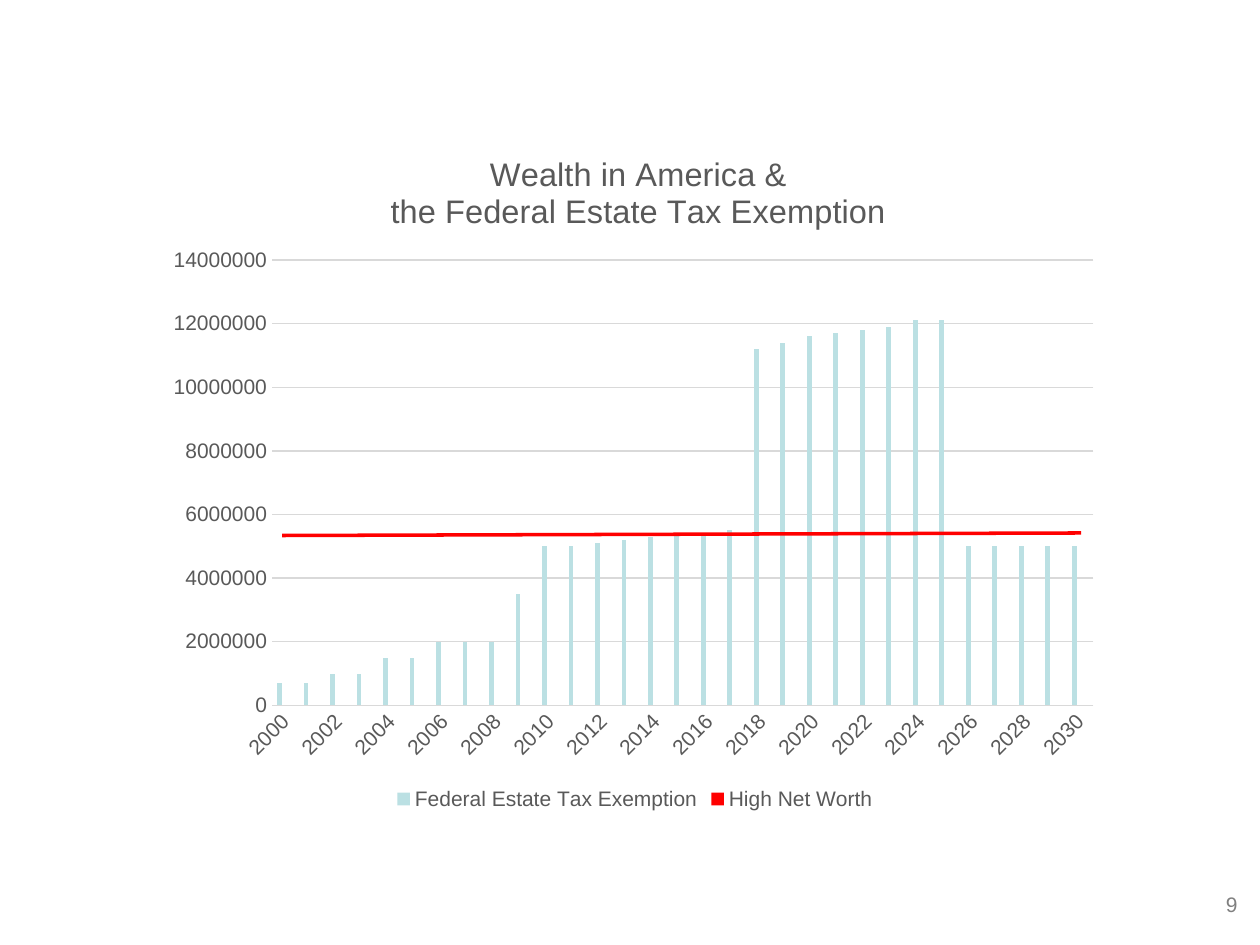
from itertools import chain, repeat
from typing import NamedTuple

from pptx import Presentation
from pptx.chart.data import CategoryChartData
from pptx.dml.color import RGBColor
from pptx.enum.chart import XL_CHART_TYPE, XL_LEGEND_POSITION, XL_TICK_MARK
from pptx.enum.shapes import MSO_CONNECTOR
from pptx.enum.text import MSO_ANCHOR, PP_ALIGN
from pptx.oxml import parse_xml
from pptx.oxml.ns import nsdecls, qn
from pptx.oxml.xmlchemy import OxmlElement
from pptx.util import Inches, Pt

FONT = "Arial"
TEXT_GRAY = "595959"
GRID_GRAY = "D9D9D9"
RED = "FF0000"


class Series(NamedTuple):
    name: str
    color: str
    values: list


class Run(NamedTuple):
    """An amount that stays the same for a number of years."""
    amount: int
    years: int = 1


EXEMPTIONS = [
    Run(700000, 2), Run(1000000, 2), Run(1500000, 2), Run(2000000, 3),
    Run(3500000), Run(5000000, 2), Run(5100000), Run(5200000), Run(5300000),
    Run(5400000, 2), Run(5500000), Run(11200000), Run(11400000),
    Run(11600000), Run(11700000), Run(11800000), Run(11900000),
    Run(12100000, 2), Run(5000000, 5),
]
YEARS = range(2000, 2031)
SERIES = [
    Series("Federal Estate Tax Exemption", "BBE0E3",
           list(chain.from_iterable(repeat(*run) for run in EXEMPTIONS))),
    Series("Series 2", "333399", [None] * len(YEARS)),
    Series("High Net Worth", RED, [None] * len(YEARS)),
]


def color(hex_string: str) -> RGBColor:
    return RGBColor.from_string(hex_string)


def style_font(font, size: float, hex_string: str) -> None:
    font.name = FONT
    font.size = Pt(size)
    font.bold = False
    font.color.rgb = color(hex_string)


def style_line(line, hex_string: str, width: float) -> None:
    line.color.rgb = color(hex_string)
    line.width = Pt(width)


def place(parent, index: int, inner: bool = False, **shares: float) -> None:
    """Fix a chart part at shares (x, y, w, h) of the chart's size."""
    for layout in parent.findall(qn("c:layout")):
        parent.remove(layout)
    target = '<c:layoutTarget val="inner"/>' if inner else ""
    modes = "".join(f'<c:{key}Mode val="edge"/>' for key in "xy")
    sizes = "".join(f'<c:{key} val="{share}"/>' for key, share in shares.items())
    parent.insert(index, parse_xml(
        f'<c:layout {nsdecls("c")}><c:manualLayout>{target}{modes}{sizes}'
        "</c:manualLayout></c:layout>"))


def hide_legend_entry(chart, index: int) -> None:
    position = chart.element.find(".//" + qn("c:legendPos"))
    position.addnext(parse_xml(
        f'<c:legendEntry {nsdecls("c")}><c:idx val="{index}"/>'
        '<c:delete val="1"/></c:legendEntry>'))


def style_axes(chart) -> None:
    for axis in (chart.category_axis, chart.value_axis):
        axis.major_tick_mark = axis.minor_tick_mark = XL_TICK_MARK.NONE
        style_font(axis.tick_labels.font, 12, TEXT_GRAY)
    years, amounts = chart.category_axis, chart.value_axis
    style_line(years.format.line, GRID_GRAY, 0.75)
    year_axis = chart.element.find(".//" + qn("c:catAx"))
    body = year_axis.find(qn("c:txPr")).find(qn("a:bodyPr"))
    body.set("rot", "-2700000")
    body.set("vert", "horz")
    amounts.minimum_scale, amounts.maximum_scale = 0, 14000000
    amounts.major_unit = 2000000
    amounts.format.line.fill.background()
    style_line(amounts.major_gridlines.format.line, GRID_GRAY, 0.75)
    amounts.tick_labels.number_format = "General"
    amounts.tick_labels.number_format_is_linked = False


def add_exemption_chart(slide) -> None:
    data = CategoryChartData()
    data.categories = [str(year) for year in YEARS]
    for series in SERIES:
        data.add_series(series.name, series.values)
    chart = slide.shapes.add_chart(
        XL_CHART_TYPE.COLUMN_CLUSTERED, Inches(1.25), Inches(1.03),
        Inches(7.58), Inches(5.44), data).chart
    style_font(chart.font, 10, "000000")

    chart.has_title = True
    title = chart.chart_title
    title.text_frame.text = "Wealth in America &\nthe Federal Estate Tax Exemption"
    for paragraph in title.text_frame.paragraphs:
        style_font(paragraph.runs[0].font, 18.6, TEXT_GRAY)
    place(chart.element.find(".//" + qn("c:title")), 1, x=0.24, y=0.03)

    plot = chart.plots[0]
    plot.gap_width, plot.overlap = 219, -27
    plot.vary_by_categories = False
    for drawn, series in zip(plot.series, SERIES):
        drawn.format.fill.solid()
        drawn.format.fill.fore_color.rgb = color(series.color)
    style_axes(chart)
    place(chart.element.find(".//" + qn("c:plotArea")), 0, inner=True,
          x=0.12, y=0.19, w=0.86, h=0.65)

    chart.has_legend = True
    chart.legend.position = XL_LEGEND_POSITION.BOTTOM
    chart.legend.include_in_layout = False
    style_font(chart.legend.font, 12, TEXT_GRAY)
    hide_legend_entry(chart, 1)


def add_net_worth_line(slide) -> None:
    line = slide.shapes.add_connector(
        MSO_CONNECTOR.STRAIGHT, Inches(2.24), Inches(4.25),
        Inches(8.58), Inches(4.23))
    style_line(line.line, RED, 2)
    line.element.spPr.append(OxmlElement("a:effectLst"))


def add_page_number(slide, number: int) -> None:
    box = slide.shapes.add_textbox(
        Inches(9.42), Inches(7), Inches(0.5), Inches(0.35))
    frame = box.text_frame
    frame.word_wrap = True
    frame.margin_left = 0
    frame.vertical_anchor = MSO_ANCHOR.MIDDLE
    frame.text = str(number)
    paragraph = frame.paragraphs[0]
    paragraph.alignment = PP_ALIGN.RIGHT
    style_font(paragraph.runs[0].font, 12, "808080")


def main() -> None:
    presentation = Presentation()
    presentation.slide_width, presentation.slide_height = Inches(10), Inches(7.5)
    slide = presentation.slides.add_slide(presentation.slide_layouts[6])
    add_page_number(slide, 9)
    add_exemption_chart(slide)
    add_net_worth_line(slide)
    presentation.save("out.pptx")


if __name__ == "__main__":
    main()
